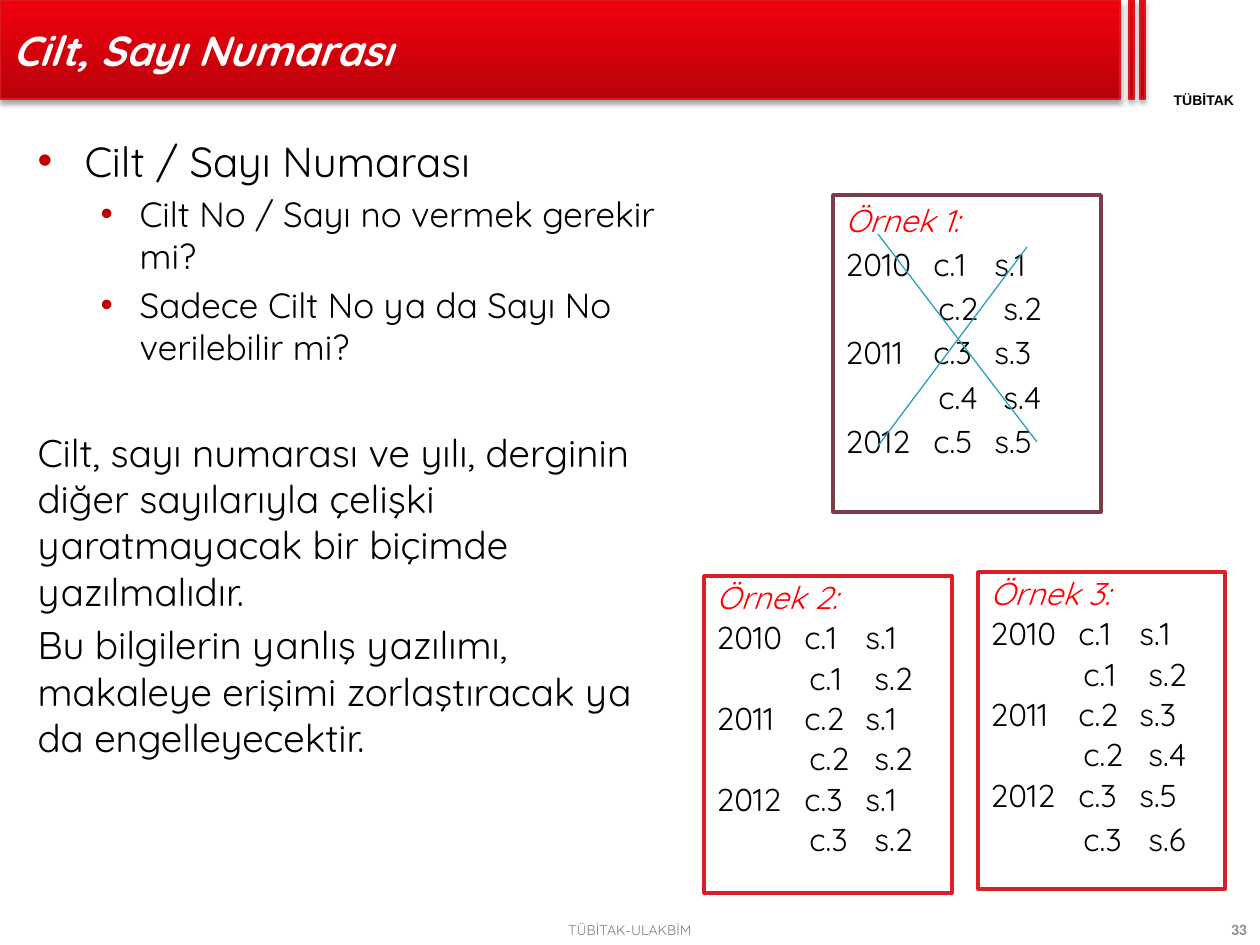
from dataclasses import dataclass

from lxml import etree
from pptx import Presentation
from pptx import util as u
from pptx.dml.color import RGBColor
from pptx.enum import shapes, text
from pptx.oxml.ns import qn


@dataclass(frozen=True)
class Theme:
    font: str = "Quicksand"
    label_font: str = "Arial"
    number_font: str = "Calibri"
    black: str = "000000"
    white: str = "FFFFFF"
    red: str = "FF0000"
    bullet: str = "C00000"
    bar_dark: str = "B8020B"
    bar_light: str = "F2000C"
    bar_line: str = "DA1A23"
    wrong_box: str = "7D3C4A"
    box: str = "DA1F28"
    cross: str = "28A1BE"
    footer: str = "808080"
    number: str = "8C8C8C"
    heading: int = 24
    point: int = 20
    body: int = 22
    example: int = 18
    small: int = 8
    number_size: int = 9


def px(value):
    return u.Emu(round(value * 914400 / 126))


def add_element(parent, tag, **attributes):
    values = {name: str(value) for name, value in attributes.items()}
    return etree.SubElement(parent, qn(tag), values)


class SlideBuilder:
    def __init__(self, slide, theme):
        self.slide = slide
        self.theme = theme

    def placeholder(self, index, box, anchor=text.MSO_ANCHOR.TOP):
        shape = self.slide.placeholders[index]
        shape.left, shape.top, shape.width, shape.height = map(px, box)
        tree = shape.element.getparent()
        tree.append(shape.element)
        frame = shape.text_frame
        frame.word_wrap = True
        frame.auto_size = text.MSO_AUTO_SIZE.NONE
        frame.vertical_anchor = anchor
        return frame

    def rectangle(self, box, line_color, line_width):
        shape = self.slide.shapes.add_shape(shapes.MSO_SHAPE.RECTANGLE, *map(px, box))
        shape.line.color.rgb = RGBColor.from_string(line_color)
        shape.line.width = u.Pt(line_width)
        shape.shadow.inherit = False
        return shape

    def run(self, paragraph, words, size, color, font=None, bold=False, italic=False):
        run = paragraph.add_run()
        run.text = words
        run.font.name = font or self.theme.font
        run.font.size = u.Pt(size)
        run.font.color.rgb = RGBColor.from_string(color)
        run.font.bold = bold
        run.font.italic = italic

    def paragraph(self, frame, first, before=0):
        paragraph = frame.paragraphs[0] if first else frame.add_paragraph()
        paragraph.alignment = text.PP_ALIGN.LEFT
        paragraph.space_before = u.Pt(0 if first else before)
        return paragraph

    def bar(self, left, width):
        theme = self.theme
        shape = self.rectangle((left, 0, width, 99), theme.bar_line, 0.75)
        shape.fill.gradient()
        shape.fill.gradient_angle = 90
        for stop, color in zip(shape.fill.gradient_stops, (theme.bar_dark, theme.bar_light)):
            stop.color.rgb = RGBColor.from_string(color)
        effects = shape.element.spPr.find(qn("a:effectLst"))
        shadow = add_element(effects, "a:outerShdw", blurRad=u.Pt(3.1), dist=u.Pt(1.8),
                             dir=5400000, rotWithShape=0)
        color = add_element(shadow, "a:srgbClr", val=theme.black)
        add_element(color, "a:alpha", val=35000)

    def label(self, words, box, size, color, alignment, font=None, bold=False, inset=13):
        shape = self.slide.shapes.add_textbox(*map(px, box))
        frame = shape.text_frame
        frame.word_wrap = True
        frame.vertical_anchor = text.MSO_ANCHOR.MIDDLE
        frame.margin_left = frame.margin_right = px(inset)
        frame.margin_top = frame.margin_bottom = 0
        paragraph = frame.paragraphs[0]
        paragraph.alignment = alignment
        self.run(paragraph, words, size, color, font, bold)

    def title(self, words, box):
        frame = self.placeholder(0, box, text.MSO_ANCHOR.MIDDLE)
        paragraph = self.paragraph(frame, True)
        self.run(paragraph, words, self.theme.heading, self.theme.white, bold=True, italic=True)

    def body(self, items, box):
        frame = self.placeholder(1, box)
        for number, (words, size, margin, indent, before) in enumerate(items):
            paragraph = self.paragraph(frame, number == 0, before)
            properties = paragraph._p.get_or_add_pPr()
            properties.set("marL", str(px(margin)))
            properties.set("indent", str(px(indent)))
            if indent:
                color = add_element(properties, "a:buClr")
                add_element(color, "a:srgbClr", val=self.theme.bullet)
                add_element(properties, "a:buFont", typeface=self.theme.label_font)
                add_element(properties, "a:buChar", char="•")
            else:
                add_element(properties, "a:buNone")
            self.run(paragraph, words, size, self.theme.black)

    def example(self, heading, rows, box, line_color, spacing=0.9):
        theme = self.theme
        shape = self.rectangle(box, line_color, 2)
        shape.fill.solid()
        shape.fill.fore_color.rgb = RGBColor.from_string(theme.white)
        frame = shape.text_frame
        frame.word_wrap = True
        frame.vertical_anchor = text.MSO_ANCHOR.TOP
        paragraph = self.paragraph(frame, True)
        paragraph.line_spacing = spacing
        self.run(paragraph, heading, theme.example, theme.red, italic=True)
        for row in rows:
            paragraph = self.paragraph(frame, False, 3.6)
            paragraph.line_spacing = spacing
            stops = add_element(paragraph._p.get_or_add_pPr(), "a:tabLst")
            for stop in (88, 149) if row[0] else (93, 158):
                add_element(stops, "a:tab", pos=px(stop), algn="l")
            self.run(paragraph, "\t".join(row), theme.example, theme.black)
        return frame

    def line(self, start, end):
        connector = self.slide.shapes.add_connector(
            shapes.MSO_CONNECTOR.STRAIGHT, *map(px, start + end))
        connector.line.color.rgb = RGBColor.from_string(self.theme.cross)
        connector.line.width = u.Pt(0.75)
        add_element(connector.element.spPr, "a:effectLst")


def example_rows(volumes, issues):
    years = ("2010", "", "2011", "", "2012", "")
    return [(year, f"c.{volume}", f"s.{issue}")
            for year, volume, issue in zip(years, volumes, issues)]


def main():
    presentation = Presentation()
    presentation.slide_width, presentation.slide_height = px(1260), px(945)
    theme = Theme()
    builder = SlideBuilder(presentation.slides.add_slide(presentation.slide_layouts[1]), theme)

    for left, width in ((0, 1120), (1129, 5), (1140, 5)):
        builder.bar(left, width)
    builder.label("TÜBİTAK", (1148, 92, 112, 16), theme.small, theme.black,
                  text.PP_ALIGN.CENTER, theme.label_font, True, 0)
    builder.label("TÜBİTAK-ULAKBİM", (0, 915, 1260, 30), theme.small, theme.footer,
                  text.PP_ALIGN.CENTER)
    builder.label("33", (968, 914, 292, 31), theme.number_size, theme.number,
                  text.PP_ALIGN.RIGHT, theme.number_font, True)

    builder.body([
        ("Cilt / Sayı Numarası", theme.heading, 47, -47, 0),
        ("Cilt No / Sayı no vermek gerekir mi?", theme.point, 102, -39, 4),
        ("Sadece Cilt No ya da Sayı No verilebilir mi?", theme.point, 102, -39, 4),
        ("Cilt, sayı numarası ve yılı, derginin diğer sayılarıyla çelişki "
         "yaratmayacak bir biçimde yazılmalıdır.", theme.body, 0, 0, 35),
        ("Bu bilgilerin yanlış yazılımı, makaleye erişimi zorlaştıracak ya da "
         "engelleyecektir.", theme.body, 0, 0, 4.4),
    ], (25, 129, 665, 784))
    builder.example("Örnek 1:", example_rows((1, 2, 3, 4, 5), (1, 2, 3, 4, 5)),
                    (833, 195, 268, 317), theme.wrong_box, 1.0)
    builder.title("Cilt, Sayı Numarası", (0, 1, 753, 97))

    volumes = (1, 1, 2, 2, 3, 3)
    third = builder.example("Örnek 3:", example_rows(volumes, (1, 2, 3, 4, 5, 6)),
                            (978, 572, 247, 317), theme.box)
    third.paragraphs[-1].line_spacing = 1.0
    builder.line((878, 234), (1037, 442))
    builder.line((1027, 247), (878, 446))
    builder.example("Örnek 2:", example_rows(volumes, (1, 2, 1, 2, 1, 2)),
                    (704, 576, 248, 317), theme.box)
    presentation.save("out.pptx")


if __name__ == "__main__":
    main()
